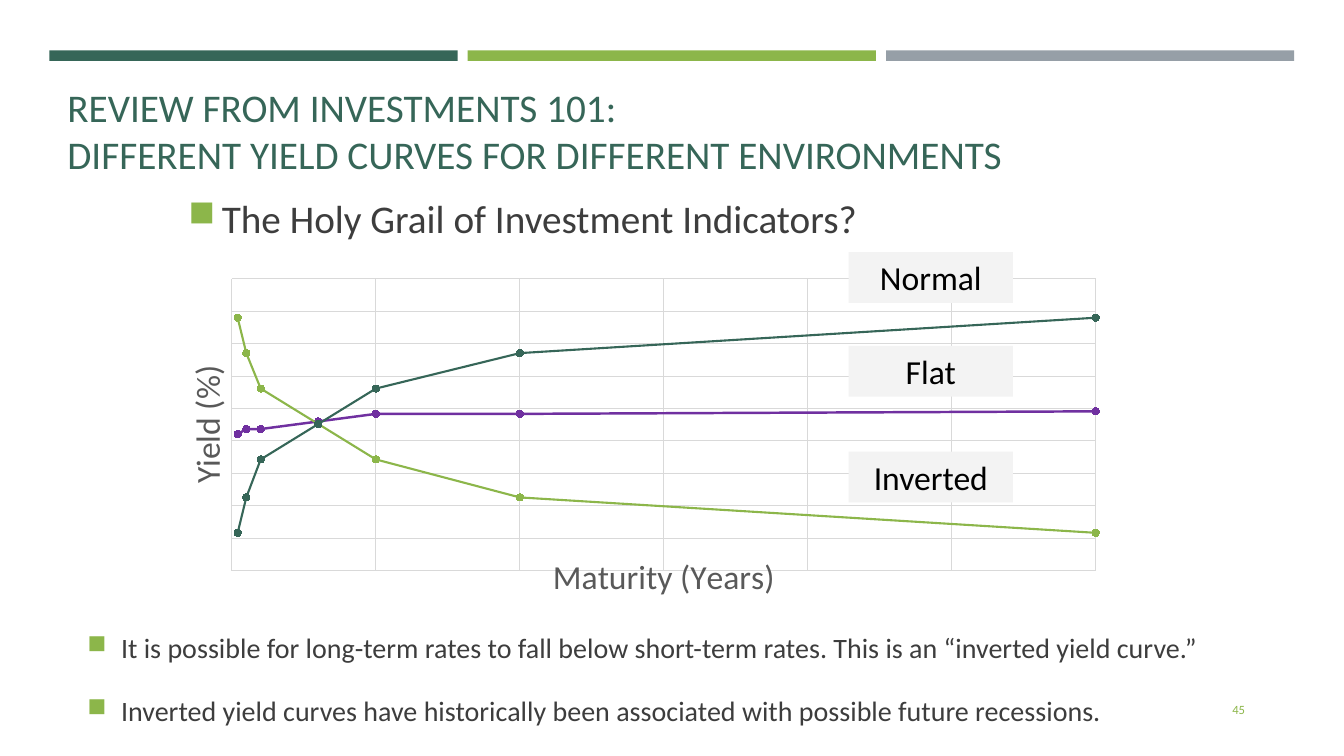
import lxml.etree
import pptx
import pptx.chart.data
import pptx.dml.color
import pptx.enum.chart
import pptx.enum.shapes
import pptx.enum.text
import pptx.oxml.ns
import pptx.util

Pt = pptx.util.Pt
qn = pptx.oxml.ns.qn
ALIGN = pptx.enum.text.PP_ALIGN
ANCHOR = pptx.enum.text.MSO_ANCHOR

HUES = {
    "pine": "366658",
    "lime": "8CB64A",
    "gray": "969FA7",
    "plum": "7030A0",
    "text": "3D3D3D",
    "axis": "595959",
    "grid": "D9D9D9",
    "label": "F3F3F3",
    "black": "000000",
}


class Deck:
    def __init__(self, font):
        self.font = font
        self.show = pptx.Presentation()
        self.show.slide_width = Pt(960)
        self.show.slide_height = Pt(540)
        self.slide = self.show.slides.add_slide(self.show.slide_layouts[6])

    def hue(self, name):
        return pptx.dml.color.RGBColor.from_string(HUES[name])

    def paint(self, fill, name):
        fill.solid()
        fill.fore_color.rgb = self.hue(name)

    def style(self, font, size, name):
        font.name = self.font
        font.size = Pt(size)
        font.bold = False
        font.color.rgb = self.hue(name)

    def put(self, par, text, size, name):
        run = par.add_run()
        run.text = text
        self.style(run.font, size, name)

    def rect(self, box, name):
        kind = pptx.enum.shapes.MSO_SHAPE.RECTANGLE
        shape = self.slide.shapes.add_shape(kind, *map(Pt, box))
        shape.shadow.inherit = False
        self.paint(shape.fill, name)
        shape.line.fill.background()
        return shape

    def label(self, box, text):
        frame = self.rect(box, "label").text_frame
        frame.word_wrap = True
        frame.vertical_anchor = ANCHOR.TOP
        frame.paragraphs[0].alignment = ALIGN.CENTER
        self.put(frame.paragraphs[0], text, 24, "black")

    def text(self, box, lines, size, name, anchor=ANCHOR.TOP,
             align=ALIGN.LEFT, inset=True):
        frame = self.slide.shapes.add_textbox(*map(Pt, box)).text_frame
        frame.word_wrap = True
        frame.vertical_anchor = anchor
        if not inset:
            frame.margin_left = frame.margin_right = 0
            frame.margin_top = frame.margin_bottom = 0
        for i, line in enumerate(lines):
            par = frame.add_paragraph() if i else frame.paragraphs[0]
            par.alignment = align
            self.put(par, line, size, name)
        return frame

    def bullets(self, box, lines, size, space=1):
        for par in self.text(box, lines, size, "text").paragraphs:
            par.line_spacing = space
            par.space_before = Pt(3)
            par.space_after = Pt(6)
            props = par._p.get_or_add_pPr()
            props.set("marL", str(Pt(24)))
            props.set("indent", str(Pt(-24)))
            tint = lxml.etree.SubElement(props, qn("a:buClr"))
            lxml.etree.SubElement(tint, qn("a:srgbClr"), val=HUES["lime"])
            lxml.etree.SubElement(props, qn("a:buSzPct"), val="92000")
            lxml.etree.SubElement(props, qn("a:buChar"), char="■")

    def axis(self, axis, title, top, step):
        axis.minimum_scale = 0
        axis.maximum_scale = top
        axis.major_unit = step
        axis.has_major_gridlines = True
        line = axis.major_gridlines.format.line
        line.width = Pt(0.75)
        self.paint(line.fill, "grid")
        self.put(axis.axis_title.text_frame.paragraphs[0], title, 24, "axis")
        axis.visible = False

    def place(self, chart, **frame):
        area = chart._chartSpace.chart.plotArea
        for old in area.findall(qn("c:layout")):
            area.remove(old)
        layout = lxml.etree.Element(qn("c:layout"))
        area.insert(0, layout)
        manual = lxml.etree.SubElement(layout, qn("c:manualLayout"))
        marks = {"layoutTarget": "inner", "xMode": "edge", "yMode": "edge"}
        for key, val in (marks | frame).items():
            lxml.etree.SubElement(manual, qn("c:" + key), val=str(val))

    def curves(self, box, years, rows):
        data = pptx.chart.data.XyChartData()
        for name, _, _, rates in rows:
            line = data.add_series(name)
            for year, rate in zip(years, rates):
                line.add_data_point(year, rate)
        kind = pptx.enum.chart.XL_CHART_TYPE.XY_SCATTER_LINES
        chart = self.slide.shapes.add_chart(kind, *map(Pt, box), data).chart
        chart.has_title = False
        chart.has_legend = False
        self.style(chart.font, 10, "black")
        plot = chart.plots[0]
        plot.vary_by_categories = False
        for line, (_, name, width, _) in zip(plot.series, rows):
            line.smooth = False
            line.format.line.width = Pt(width)
            self.paint(line.format.line.fill, name)
            mark = line.marker
            mark.style = pptx.enum.chart.XL_MARKER_STYLE.CIRCLE
            mark.size = 5
            self.paint(mark.format.fill, name)
            self.paint(mark.format.line.fill, name)
        self.axis(chart.category_axis, "Maturity (Years)", 30, 5)
        self.axis(chart.value_axis, "Yield (%)", 115.38, 12.82)
        self.place(chart, x=0.056, y=0.051, w=0.903, h=0.84)


def main():
    deck = Deck("Calibri")
    for i, name in enumerate(("pine", "lime", "gray")):
        deck.rect((35.3 + 298.8 * i, 36, 291.6, 7.5), name)
    deck.text((816.5, 492.5, 80, 28.8), ["45"], 9, "lime",
              ANCHOR.MIDDLE, ALIGN.RIGHT)
    deck.text((48.2, 33.1, 911, 93.6),
              ["REVIEW FROM INVESTMENTS 101:",
               "DIFFERENT YIELD CURVES FOR DIFFERENT ENVIRONMENTS"],
              28, "pine", ANCHOR.BOTTOM, inset=False)
    deck.bullets((127.4, 135.4, 683.3, 26.6),
                 ["The Holy Grail of Investment Indicators?"], 28)
    deck.bullets((55.4, 434.9, 827.3, 93.6),
                 ["It is possible for long-term rates to fall below short-term "
                  "rates. This is an “inverted yield curve.”",
                  "Inverted yield curves have historically been associated "
                  "with possible future recessions."], 20, 1.5)
    deck.curves((127.4, 186.5, 683.3, 248.4), (0.2, 0.5, 1, 3, 5, 10, 30), [
        ("Series 1", "pine", 1.5, (15, 29, 44, 58, 72, 86, 100)),
        ("Series 2", "lime", 1.5, (100, 86, 72, 58, 44, 29, 15)),
        ("Series 3", "plum", 1.75, (54, 56, 56, 59, 62, 62, 63)),
    ])
    for text, top in (("Normal", 180), ("Flat", 247), ("Inverted", 322.6)):
        deck.label((606.2, top, 117.4, 36.3), text)
    deck.show.save("out.pptx")


if __name__ == "__main__":
    main()
